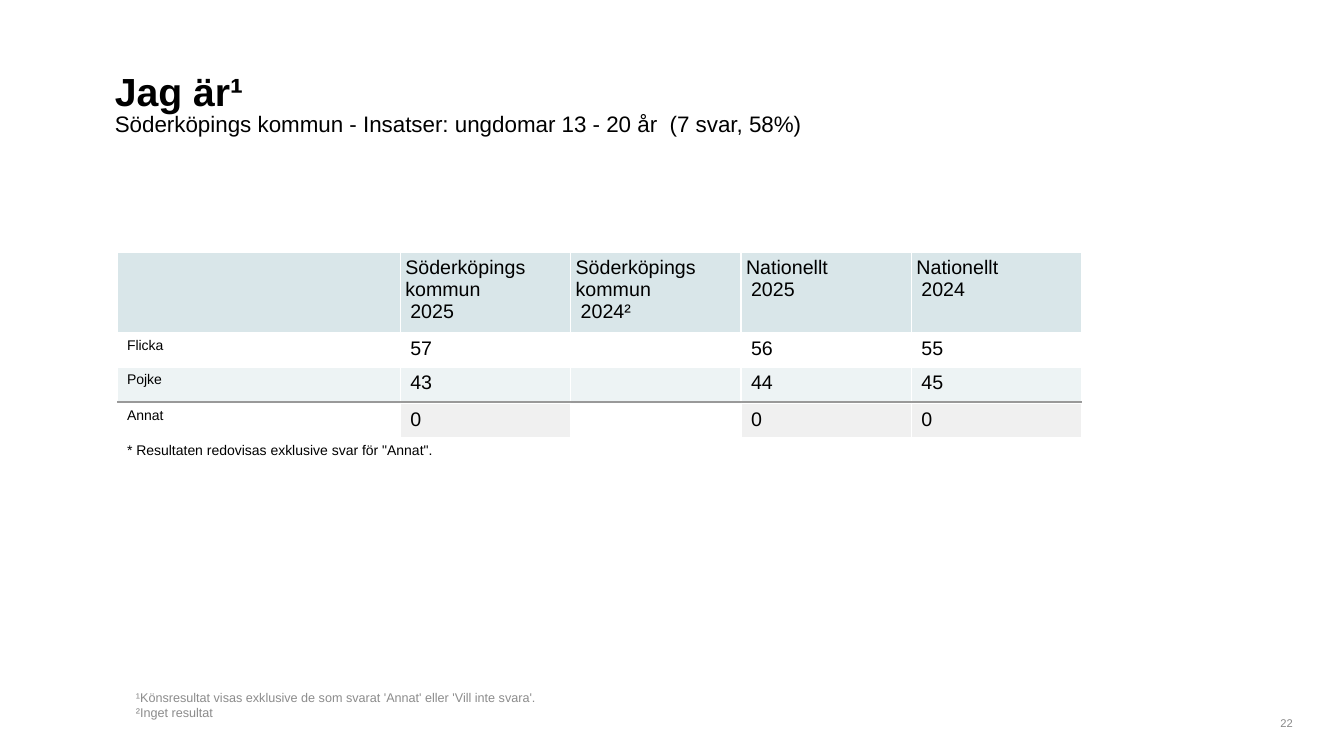
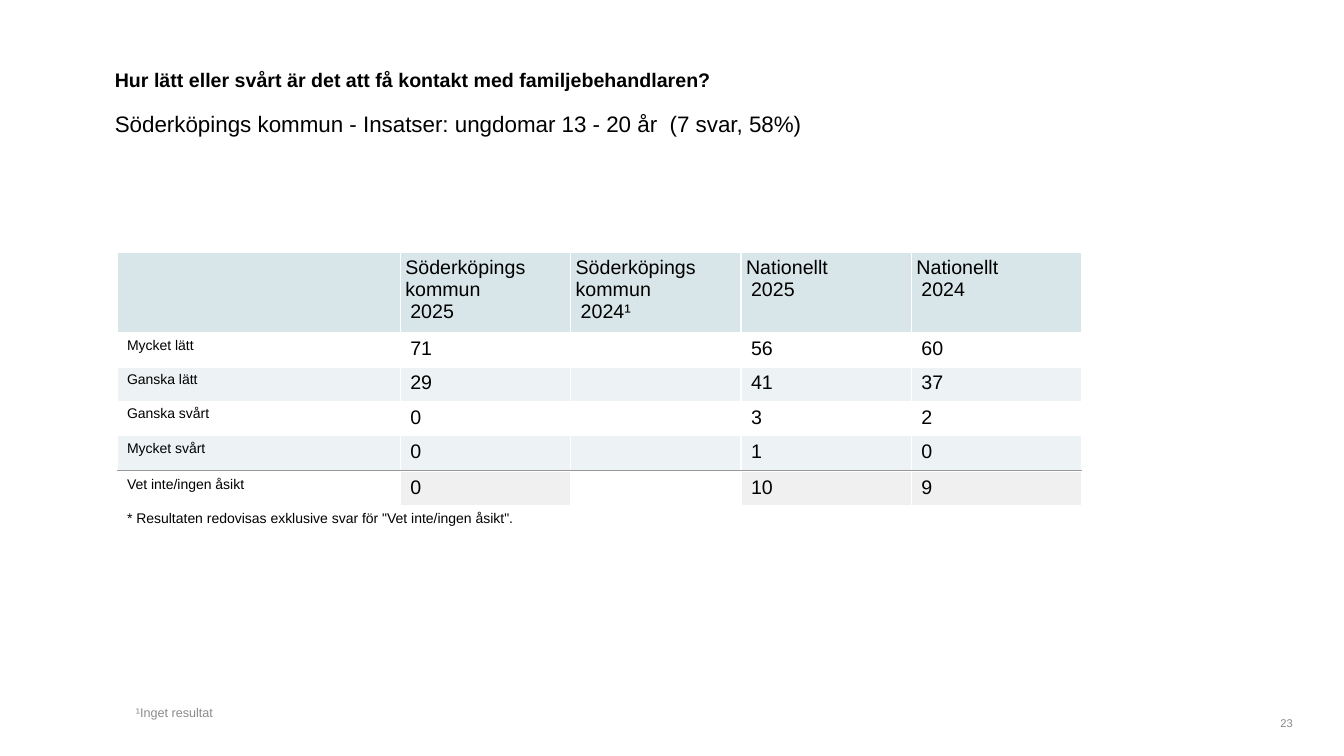
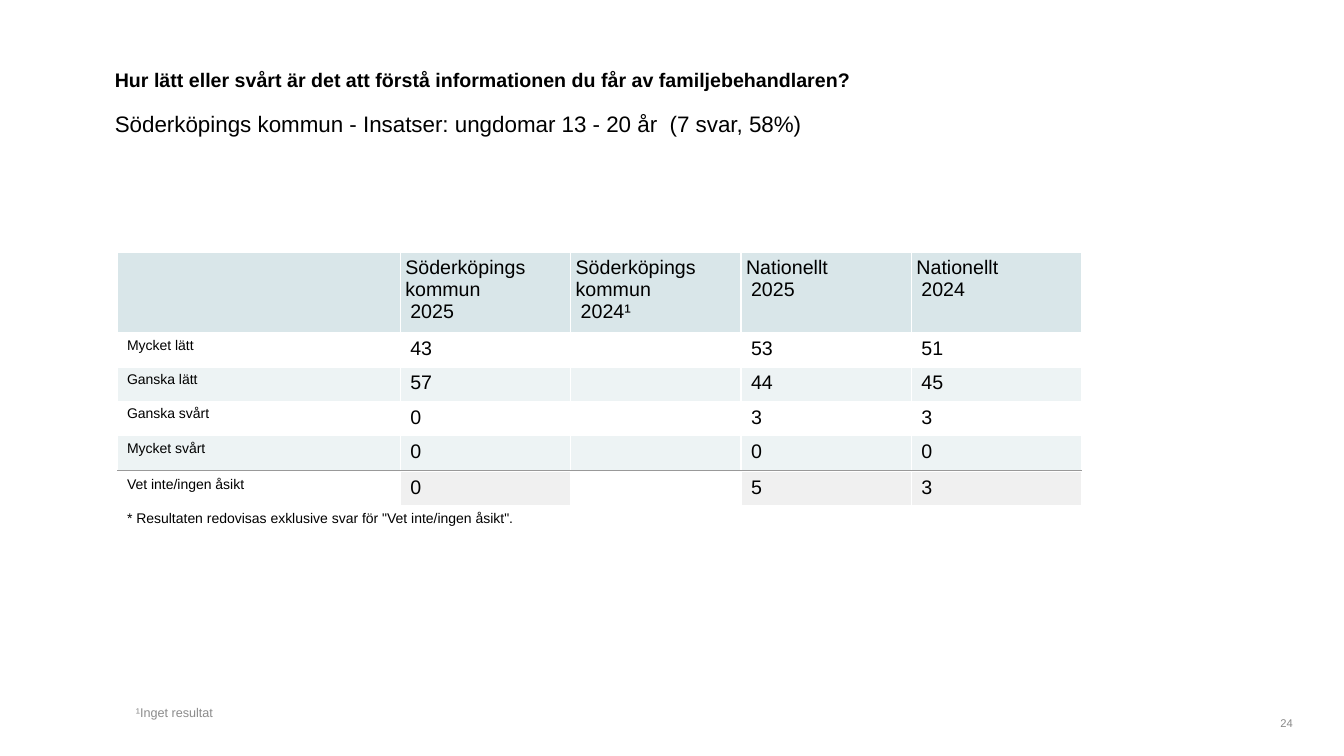
from lxml import etree
from pptx import Presentation
from pptx.dml.color import RGBColor
from pptx.enum.text import MSO_ANCHOR, PP_ALIGN
from pptx.oxml.ns import qn
from pptx.util import Pt

EMU_PER_PX = 9144
FONT = "Arial"
TOP, BOTTOM = MSO_ANCHOR.TOP, MSO_ANCHOR.BOTTOM
LEFT, RIGHT = PP_ALIGN.LEFT, PP_ALIGN.RIGHT

BLACK = RGBColor(0x00, 0x00, 0x00)
WHITE = RGBColor(0xFF, 0xFF, 0xFF)
NOTE_GREY = RGBColor(0x8C, 0x8C, 0x8C)
NUMBER_GREY = RGBColor(0x89, 0x89, 0x89)
RULE_GREY = RGBColor(0x99, 0x99, 0x99)
HEADER_BLUE = RGBColor(0xD9, 0xE6, 0xE9)
BAND_BLUE = RGBColor(0xED, 0xF3, 0xF4)
EXCLUDED_GREY = RGBColor(0xF0, 0xF0, 0xF0)

SLIDE_SIZE = (1333, 750)
TITLE_BOX = (104, 62, 1125, 42)
SUBTITLE_BOX = (104, 104, 1125, 42)
TABLE_ORIGIN = (116, 250)
NOTES_BOX = (125, 323, 760, 396)
NUMBER_BOX = (1250, 708, 42, 21)

COLUMN_WIDTHS = (281, 169, 169, 169, 169)
HEADER_HEIGHT, ROW_HEIGHT, RULE_HEIGHT = 79, 34, 2
CELL_INSET = 5
LABEL_SIZE, VALUE_SIZE = 10, 14

SUBTITLE = "Söderköpings kommun - Insatser: ungdomar 13 - 20 år  (7 svar, 58%)"
NO_RESULT = "Inget resultat"
EASE_LABELS = ("Mycket lätt", "Ganska lätt", "Ganska svårt", "Mycket svårt")
NO_OPINION = "Vet inte/ingen åsikt"

# Values per row: municipality 2025, municipality 2024, national 2025, national 2024
QUESTIONS = (
    {
        "title": "Jag är¹", "title_size": 28, "number": 22, "mark": "²",
        "answers": (("Flicka", 57, "", 56, 55), ("Pojke", 43, "", 44, 45)),
        "excluded": ("Annat", 0, "", 0, 0),
        "notes": ("¹Könsresultat visas exklusive de som svarat 'Annat' eller 'Vill inte svara'.",
                  "²" + NO_RESULT),
    },
    {
        "title": "Hur lätt eller svårt är det att få kontakt med familjebehandlaren?",
        "title_size": 14, "number": 23, "mark": "¹",
        "answers": tuple(zip(EASE_LABELS, (71, 29, 0, 0), ("",) * 4,
                             (56, 41, 3, 1), (60, 37, 2, 0))),
        "excluded": (NO_OPINION, 0, "", 10, 9),
        "notes": ("¹" + NO_RESULT,),
    },
    {
        "title": "Hur lätt eller svårt är det att förstå informationen du får av familjebehandlaren?",
        "title_size": 14, "number": 24, "mark": "¹",
        "answers": tuple(zip(EASE_LABELS, (43, 57, 0, 0), ("",) * 4,
                             (53, 44, 3, 0), (51, 45, 3, 0))),
        "excluded": (NO_OPINION, 0, "", 5, 3),
        "notes": ("¹" + NO_RESULT,),
    },
)


def px(length):
    return length * EMU_PER_PX


def set_font(font, size, color=BLACK, bold=False):
    values = {"name": FONT, "size": Pt(size), "bold": bold}
    for name, value in values.items():
        setattr(font, name, value)
    font.color.rgb = color


def add_text(slide, box, lines, size, color=BLACK, bold=False, anchor=TOP, align=LEFT):
    frame = slide.shapes.add_textbox(*map(px, box)).text_frame
    frame.word_wrap = True
    frame.vertical_anchor = anchor
    frame.text = "\n".join(lines)
    for paragraph in frame.paragraphs:
        paragraph.alignment = align
        set_font(paragraph.runs[0].font, size, color, bold)


def set_borders(cell, visible):
    """Draw thin white lines on the visible sides (of "LRTB") and none on the others."""
    properties = cell._tc.get_or_add_tcPr()
    for side in "LRTB":
        line = etree.SubElement(properties, qn("a:ln" + side), w=str(Pt(1)))
        if side in visible:
            fill = etree.SubElement(line, qn("a:solidFill"))
            etree.SubElement(fill, qn("a:srgbClr"), val=str(WHITE))
        else:
            etree.SubElement(line, qn("a:noFill"))


def fill_cell(cell, text="", size=VALUE_SIZE, fill=None, borders="LRTB",
              inset=CELL_INSET, indent_first=True):
    set_borders(cell, borders)
    if fill is None:
        cell.fill.background()
    else:
        cell.fill.solid()
        cell.fill.fore_color.rgb = fill
    for side in ("left", "right", "top", "bottom"):
        setattr(cell, "margin_" + side, px(inset))
    cell.text_frame.text = str(text)
    for index, paragraph in enumerate(cell.text_frame.paragraphs):
        if index or indent_first:
            paragraph._p.get_or_add_pPr().set("marL", str(px(CELL_INSET)))
        for run in paragraph.runs:
            set_font(run.font, size)
        if not paragraph.runs:
            etree.SubElement(paragraph._p, qn("a:endParaRPr"), sz=str(size * 100))


def fill_row(cells, values, fills, borders="LRTB"):
    """Write a small label followed by larger values."""
    for column, (cell, value, fill) in enumerate(zip(cells, values, fills)):
        fill_cell(cell, value, VALUE_SIZE if column else LABEL_SIZE, fill, borders)


def add_result_table(slide, origin, question):
    answers, excluded = question["answers"], question["excluded"]
    heights = (HEADER_HEIGHT, *[ROW_HEIGHT] * len(answers), RULE_HEIGHT, ROW_HEIGHT, ROW_HEIGHT)
    size = (sum(COLUMN_WIDTHS), sum(heights))
    table = slide.shapes.add_table(len(heights), len(COLUMN_WIDTHS),
                                   *map(px, origin + size)).table
    table.first_row = table.horz_banding = False
    for column, width in zip(table.columns, COLUMN_WIDTHS):
        column.width = px(width)
    for row, height in zip(table.rows, heights):
        row.height = px(height)
    header, *answer_rows, rule, excluded_row, remark = [list(row.cells) for row in table.rows]

    headings = ("", "Söderköpings kommun\n2025", f"Söderköpings kommun\n2024{question['mark']}",
                "Nationellt\n2025", "Nationellt\n2024")
    for cell, heading in zip(header, headings):
        fill_cell(cell, heading, fill=HEADER_BLUE, indent_first=False)

    for index, (cells, values) in enumerate(zip(answer_rows, answers)):
        fill = BAND_BLUE if index % 2 else None
        borders = "LRT" if cells is answer_rows[-1] else "LRTB"
        fill_row(cells, values, [fill] * len(cells), borders)

    for cell in rule:
        fill_cell(cell, size=1, fill=RULE_GREY, borders="B", inset=0)
    rule[0].merge(rule[-1])

    fills = [None] + [None if value == "" else EXCLUDED_GREY for value in excluded[1:]]
    fill_row(excluded_row, excluded, fills)

    remark_text = f'* Resultaten redovisas exklusive svar för "{excluded[0]}".'
    for cell in remark:
        fill_cell(cell, remark_text if cell is remark[0] else "", LABEL_SIZE)
    remark[0].merge(remark[-1])


def add_question_slide(deck, question):
    slide = deck.slides.add_slide(deck.slide_layouts[6])
    add_text(slide, TITLE_BOX, [question["title"]], question["title_size"], bold=True)
    add_text(slide, SUBTITLE_BOX, [SUBTITLE], 16)
    add_result_table(slide, TABLE_ORIGIN, question)
    add_text(slide, NOTES_BOX, question["notes"], 9, NOTE_GREY, anchor=BOTTOM)
    add_text(slide, NUMBER_BOX, [str(question["number"])], 8, NUMBER_GREY,
             anchor=BOTTOM, align=RIGHT)


def main():
    deck = Presentation()
    deck.slide_width, deck.slide_height = map(px, SLIDE_SIZE)
    for question in QUESTIONS:
        add_question_slide(deck, question)
    deck.save("out.pptx")


if __name__ == "__main__":
    main()
